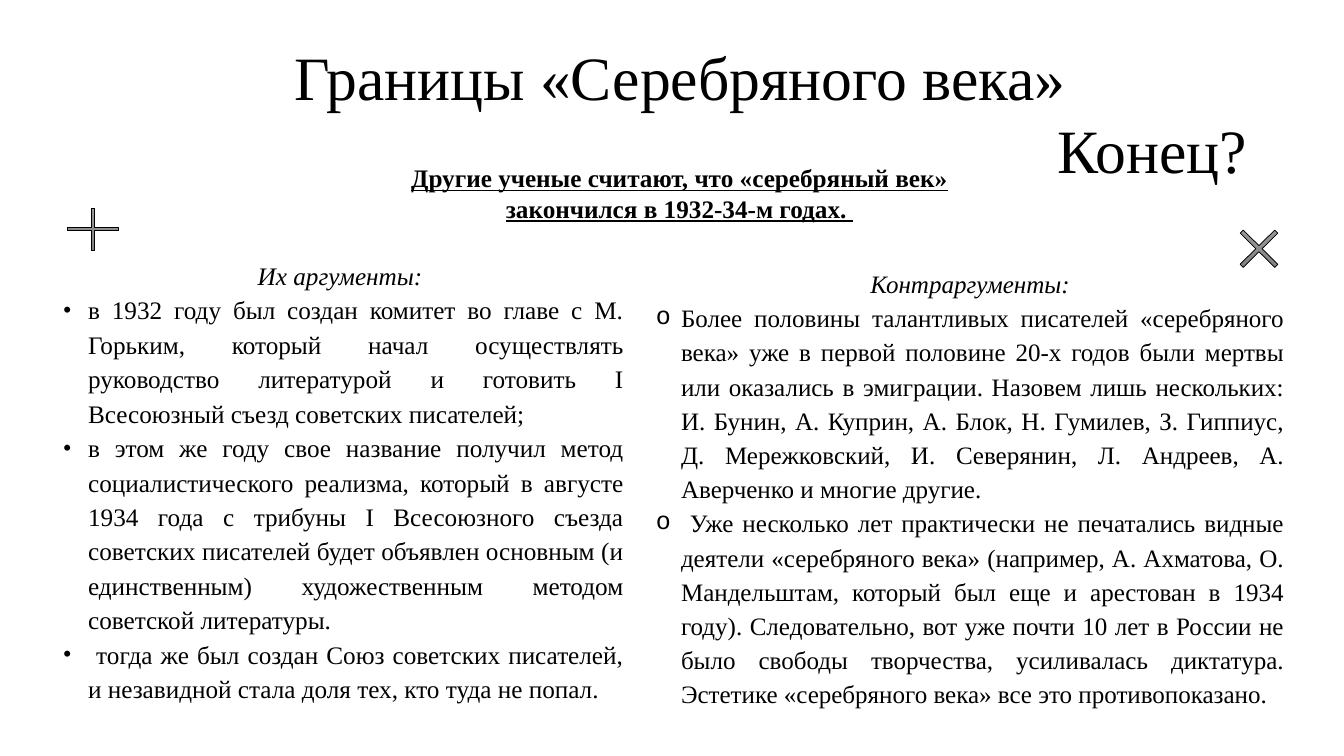
from pptx import Presentation
from pptx.dml.color import RGBColor
from pptx.enum.shapes import MSO_SHAPE
from pptx.enum.text import MSO_ANCHOR, MSO_AUTO_SIZE, PP_ALIGN
from pptx.oxml.ns import qn
from pptx.util import Inches, Pt
from lxml.etree import SubElement

COLORS = {"text": "000000", "line": "000000", "light": "9D9D9D", "dark": "7C7C7C"}


class Deck:
    """Builds slide elements in one style, with boxes given in percent of the slide."""

    def __init__(self, font):
        self.prs = Presentation()
        self.prs.slide_width = Inches(13.33)
        self.prs.slide_height = Inches(7.5)
        self.font = font
        self.slide = self.prs.slides.add_slide(self.prs.slide_layouts[5])

    def box(self, left, top, width, height):
        w, h = self.prs.slide_width, self.prs.slide_height
        return [int(share * side / 100) for share, side in
                ((left, w), (top, h), (width, w), (height, h))]

    def style(self, p, size, align, spacing=1.0, **marks):
        p.alignment = align
        p.line_spacing = spacing
        p.space_before = p.space_after = Pt(0)
        for r in p.runs:
            r.font.name = self.font
            r.font.size = Pt(size)
            r.font.color.rgb = RGBColor.from_string(COLORS["text"])
            for mark, value in marks.items():
                setattr(r.font, mark, value)

    def frame(self, sp, anchor):
        tf = sp.text_frame
        tf.word_wrap = True
        tf.auto_size = MSO_AUTO_SIZE.NONE
        tf.vertical_anchor = anchor
        return tf

    def title(self, text, area):
        sp = self.slide.shapes.title
        sp.left, sp.top, sp.width, sp.height = self.box(*area)
        tf = self.frame(sp, MSO_ANCHOR.MIDDLE)
        tf.text = text
        self.style(tf.paragraphs[0], 44, PP_ALIGN.CENTER, 0.9)

    def text(self, text, area, size, align, anchor=MSO_ANCHOR.TOP, spacing=1.0, **marks):
        sp = self.slide.shapes.add_textbox(*self.box(*area))
        tf = self.frame(sp, anchor)
        tf.text = text
        self.style(tf.paragraphs[0], size, align, spacing, **marks)
        return tf

    def arguments(self, heading, items, area, size, bullet, bullet_font):
        spacing = 1.14
        tf = self.text(heading, area, size, PP_ALIGN.CENTER, spacing=spacing, italic=True)
        for item in items:
            p = tf.add_paragraph()
            p.text = item
            self.style(p, size, PP_ALIGN.JUSTIFY, spacing)
            pPr = p._p.get_or_add_pPr()
            pPr.set("marL", str(Inches(0.25)))
            pPr.set("indent", str(-Inches(0.25)))
            SubElement(pPr, qn("a:buFont")).set("typeface", bullet_font)
            SubElement(pPr, qn("a:buChar")).set("char", bullet)

    def sign(self, kind, area, thickness):
        sp = self.slide.shapes.add_shape(kind, *self.box(*area))
        sp.adjustments[0] = thickness
        sp.shadow.inherit = False
        sp.fill.gradient()
        sp.fill.gradient_angle = 270
        for stop, name in zip(sp.fill.gradient_stops, ("light", "dark")):
            stop.color.rgb = RGBColor.from_string(COLORS[name])
        sp.line.color.rgb = RGBColor.from_string(COLORS["line"])
        sp.line.width = Pt(0.5)


def main():
    deck = Deck("Times New Roman")
    deck.title("Границы «Серебряного века»", (7.5, 3.3, 86.3, 14.7))
    deck.arguments("Их аргументы: ", [
        "в 1932 году был создан комитет во главе с М. Горьким, который начал осуществлять "
        "руководство литературой и готовить I Всесоюзный съезд советских писателей; ",
        "в этом же году свое название получил метод социалистического реализма, который "
        "в августе 1934 года с трибуны I Всесоюзного съезда советских писателей будет "
        "объявлен основным (и единственным) художественным методом советской литературы.",
        " тогда же был создан Союз советских писателей, и незавидной стала доля тех, "
        "кто туда не попал.",
    ], (3.94, 33.2, 43.2, 60.5), 18, "•", "Times New Roman")
    deck.text("Конец?", (77.96, 10.6, 15.8, 19.3), 44, PP_ALIGN.LEFT, MSO_ANCHOR.MIDDLE, 0.9)
    deck.sign(MSO_SHAPE.MATH_PLUS, (4.33, 26.55, 5.2, 7.5), 0.057)
    deck.sign(MSO_SHAPE.MATH_MULTIPLY, (91.2, 28.55, 4.95, 8.7), 0.066)
    deck.arguments("Контраргументы:", [
        "Более половины талантливых писателей «серебряного века» уже в первой половине "
        "20-х годов были мертвы или оказались в эмиграции. Назовем лишь нескольких: "
        "И. Бунин, А. Куприн, А. Блок, Н. Гумилев, З. Гиппиус, Д. Мережковский, "
        "И. Северянин, Л. Андреев, А. Аверченко и многие другие.",
        " Уже несколько лет практически не печатались видные деятели «серебряного века» "
        "(например, А. Ахматова, О. Мандельштам, который был еще и арестован в 1934 году). "
        "Следовательно, вот уже почти 10 лет в России не было свободы творчества, "
        "усиливалась диктатура. Эстетике «серебряного века» все это противопоказано.",
    ], (48.06, 34.3, 48.24, 60.7), 17.9, "o", "Courier New")
    deck.text("Другие ученые считают, что «серебряный век» закончился в 1932-34-м годах. ",
              (25.55, 20.87, 50, 9.5), 18, PP_ALIGN.CENTER, bold=True, underline=True)
    deck.prs.save("out.pptx")


if __name__ == "__main__":
    main()
